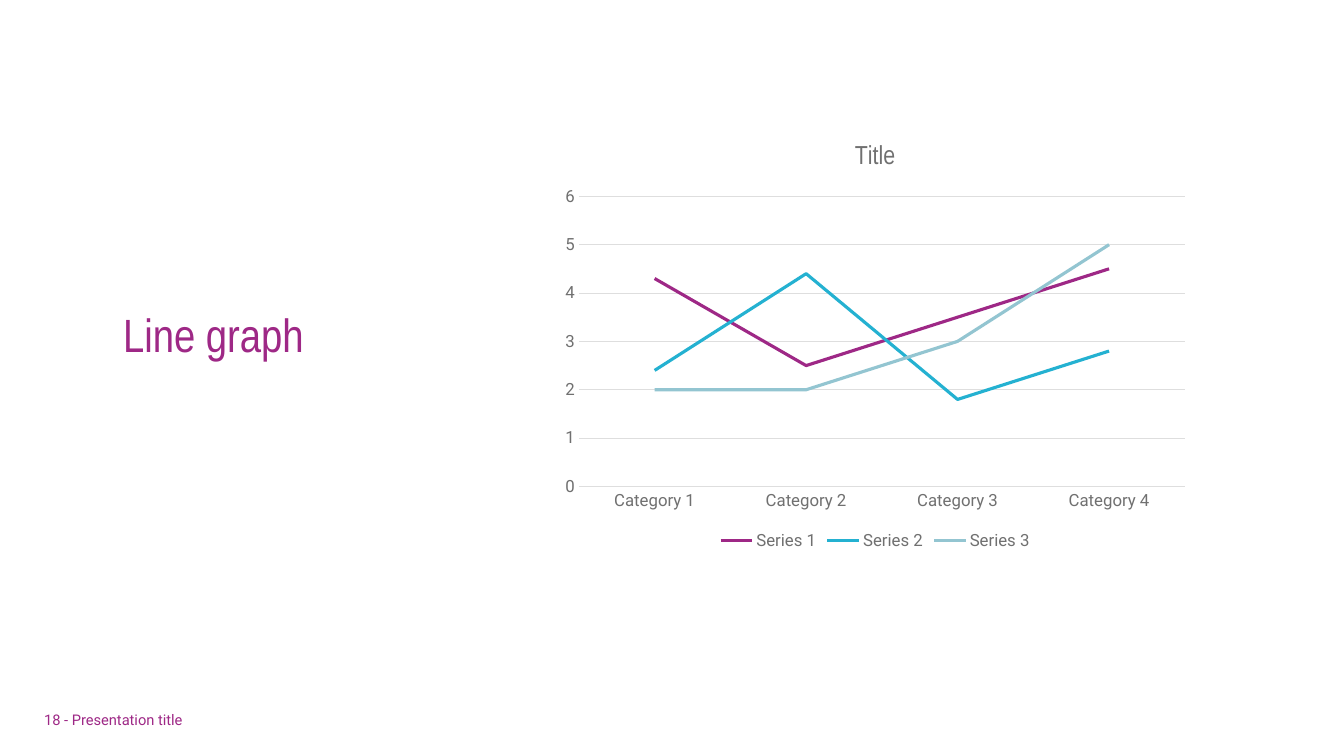
from pptx import Presentation
from pptx import util as u
from pptx.chart.data import CategoryChartData
from pptx.dml.color import RGBColor
from pptx.enum import chart as ch, text

PURPLE, BLUE, PALE = "9E2886", "24B1D1", "93C5D1"
GREY, RULE = "707070", "DEDEDE"
HEADING, BODY = "Arial Narrow", "Roboto"
CATEGORIES = [f"Category {number}" for number in range(1, 5)]
SERIES = [
    ("Series 1", (4.3, 2.5, 3.5, 4.5), PURPLE),
    ("Series 2", (2.4, 4.4, 1.8, 2.8), BLUE),
    ("Series 3", (2, 2, 3, 5), PALE),
]


def color(value):
    return RGBColor.from_string(value)


def set_font(font, name, size, value):
    font.name, font.size, font.bold = name, u.Pt(size), False
    font.color.rgb = color(value)


def set_line(line, value, width):
    line.color.rgb = color(value)
    line.width = u.Pt(width)


def inches(box):
    return [u.Inches(length) for length in box]


def place_title(page, box):
    title = page.shapes.title
    title.left, title.top, title.width, title.height = inches(box)
    frame = title.text_frame
    frame.text = "Line graph"
    frame.auto_size = text.MSO_AUTO_SIZE.NONE
    frame.vertical_anchor = text.MSO_ANCHOR.TOP
    para = frame.paragraphs[0]
    para.alignment = text.PP_ALIGN.LEFT
    para.line_spacing = 0.9
    set_font(para.font, HEADING, 33.3, PURPLE)


def add_footer(page, box):
    frame = page.shapes.add_textbox(*inches(box)).text_frame
    frame.word_wrap = False
    frame.text = "18 - Presentation title"
    set_font(frame.paragraphs[0].font, BODY, 10.5, PURPLE)


def style_axes(chart):
    for axis in (chart.category_axis, chart.value_axis):
        axis.major_tick_mark = axis.minor_tick_mark = ch.XL_TICK_MARK.NONE
        set_font(axis.tick_labels.font, BODY, 12, GREY)
    set_line(chart.category_axis.format.line, RULE, 0.75)
    scale = chart.value_axis
    scale.minimum_scale, scale.maximum_scale, scale.major_unit = 0, 6, 1
    scale.format.line.fill.background()
    scale.has_major_gridlines = True
    set_line(scale.major_gridlines.format.line, RULE, 0.75)


def add_line_chart(page, box):
    data = CategoryChartData()
    data.categories = CATEGORIES
    for name, values, _ in SERIES:
        data.add_series(name, values)
    chart = page.shapes.add_chart(ch.XL_CHART_TYPE.LINE, *inches(box), data).chart
    set_font(chart.font, BODY, 10, "232323")

    # Title and legend
    chart.has_title = True
    heading = chart.chart_title
    heading.include_in_layout = False
    heading.text_frame.text = "Title"
    set_font(heading.text_frame.paragraphs[0].font, HEADING, 18.6, GREY)
    chart.has_legend = True
    chart.legend.position = ch.XL_LEGEND_POSITION.BOTTOM
    chart.legend.include_in_layout = False
    set_font(chart.legend.font, BODY, 12, GREY)

    # Axes and lines
    style_axes(chart)
    plot = chart.plots[0]
    plot.vary_by_categories = False
    for series, (_, _, value) in zip(plot.series, SERIES):
        series.smooth = False
        series.marker.style = ch.XL_MARKER_STYLE.NONE
        set_line(series.format.line, value, 2.25)


def main():
    deck = Presentation()
    deck.slide_width, deck.slide_height = inches((13.33, 7.5))
    page = deck.slides.add_slide(deck.slide_layouts[5])
    place_title(page, (1.12, 3.05, 2.3, 0.63))
    add_line_chart(page, (5.48, 1.23, 6.4, 4.27))
    add_footer(page, (0.34, 7, 1.65, 0.28))
    deck.save("out.pptx")


if __name__ == "__main__":
    main()
